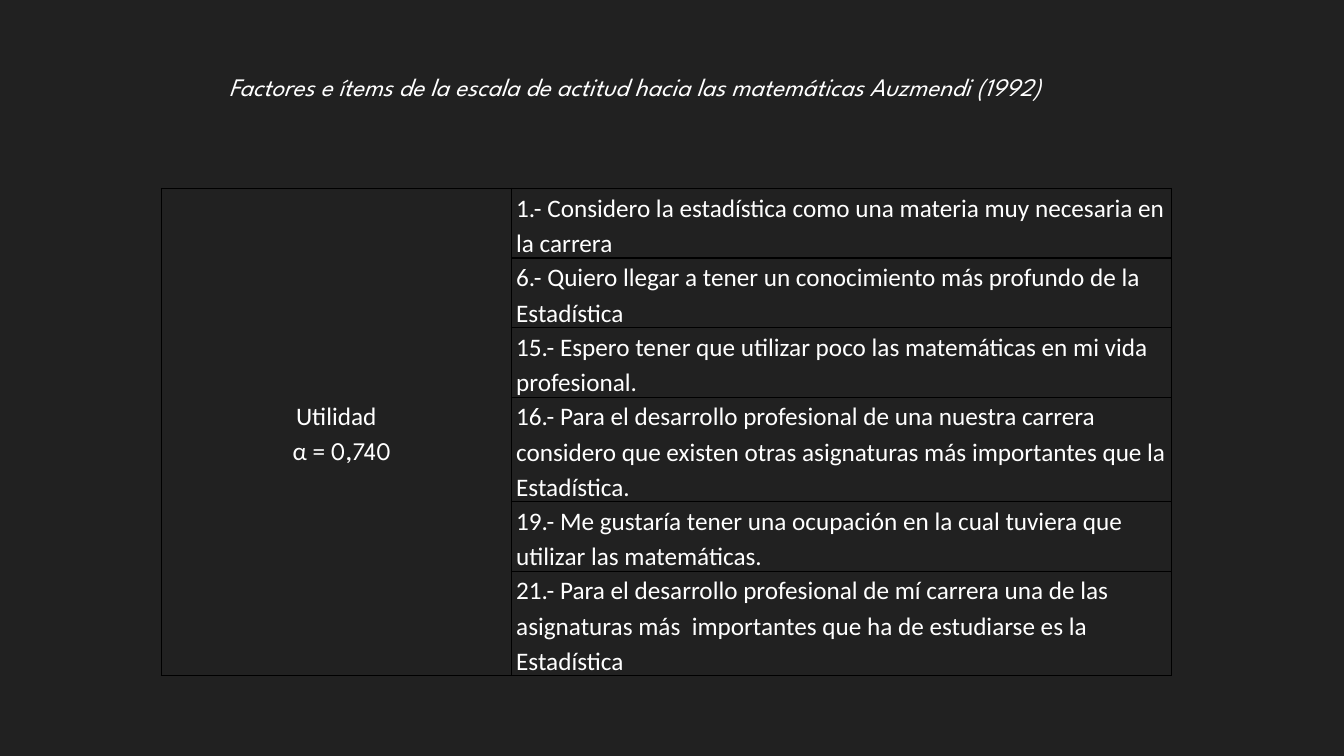
from lxml import etree
from pptx import Presentation
from pptx.dml.color import RGBColor
from pptx.enum.text import MSO_ANCHOR, MSO_AUTO_SIZE, PP_ALIGN
from pptx.oxml.ns import qn
from pptx.util import Inches, Pt

CENTER, LEFT = PP_ALIGN.CENTER, PP_ALIGN.LEFT
TOP, MIDDLE = MSO_ANCHOR.TOP, MSO_ANCHOR.MIDDLE
FIT_SHAPE = MSO_AUTO_SIZE.SHAPE_TO_FIT_TEXT
DARK = RGBColor(0x21, 0x21, 0x21)
WHITE = RGBColor(0xFF, 0xFF, 0xFF)
BLACK = RGBColor(0, 0, 0)
BODY_FONT, TITLE_FONT = "Calibri", "League Spartan"
LINE_HEIGHT = 0.345

# Each item with the number of lines it takes
ITEMS = [
    ("1.- Considero la estadística como una materia muy necesaria en la carrera", 2),
    ("6.- Quiero llegar a tener un conocimiento más profundo de la Estadística", 2),
    ("15.- Espero tener que utilizar poco las matemáticas en mi vida profesional.", 2),
    ("16.- Para el desarrollo profesional de una nuestra carrera considero que "
     "existen otras asignaturas más importantes que la Estadística.", 3),
    ("19.- Me gustaría tener una ocupación en la cual tuviera que utilizar las "
     "matemáticas.", 2),
    ("21.- Para el desarrollo profesional de mí carrera una de las asignaturas "
     "más  importantes que ha de estudiarse es la Estadística", 3),
]


def style(p, font, align):
    p.alignment = align
    p.font.name = font
    p.font.size = Pt(18)
    p.font.color.rgb = WHITE


def format_cell(cell):
    cell.margin_left = cell.margin_right = Inches(0.05)
    cell.margin_top = cell.margin_bottom = 0
    tcPr = cell._tc.get_or_add_tcPr()
    for side in ("lnL", "lnR", "lnT", "lnB"):
        ln = etree.SubElement(tcPr, qn(f"a:{side}"), w=str(Pt(1)))
        fill = etree.SubElement(ln, qn("a:solidFill"))
        etree.SubElement(fill, qn("a:srgbClr"), val=str(BLACK))
    cell.fill.background()


prs = Presentation()
prs.slide_width, prs.slide_height = Inches(13.33), Inches(7.5)
s = prs.slides.add_slide(prs.slide_layouts[5])
s.background.fill.solid()
s.background.fill.fore_color.rgb = DARK

# Title
title = s.shapes.title
title.left, title.top = Inches(2.11), Inches(0.66)
title.width, title.height = Inches(8.35), Inches(0.4)
tf = title.text_frame
tf.text = "Factores e ítems de la escala de actitud hacia las matemáticas Auzmendi (1992)"
tf.word_wrap = True
tf.auto_size = FIT_SHAPE
tf.vertical_anchor = TOP
tf.margin_left = Inches(0.16)
p = tf.paragraphs[0]
style(p, TITLE_FONT, LEFT)
p.font.italic = True

# Table of factor and items
total = LINE_HEIGHT * sum(lines for _, lines in ITEMS)
table = s.shapes.add_table(len(ITEMS), 2, Inches(1.6), Inches(1.87),
                           Inches(10.02), Inches(total)).table
table.first_row = table.horz_banding = False
table.columns[0].width, table.columns[1].width = Inches(3.47), Inches(6.55)
for cell in table.iter_cells():
    format_cell(cell)

for i, (item, lines) in enumerate(ITEMS):
    table.rows[i].height = Inches(LINE_HEIGHT * lines)
    tf = table.cell(i, 1).text_frame
    tf.text = item
    p = tf.paragraphs[0]
    style(p, BODY_FONT, LEFT)
    p.line_spacing = 1.15

# Factor name and its reliability, beside all the items
factor = table.cell(0, 0)
factor.merge(table.cell(len(ITEMS) - 1, 0))
factor.vertical_anchor = MIDDLE
tf = factor.text_frame
tf.text = "Utilidad\nα = "
for p in tf.paragraphs:
    style(p, BODY_FONT, CENTER)
    p.line_spacing = 1.15
r = p.add_run()
r.text = "0,740"
r.font.name = TITLE_FONT
p._p.get_or_add_pPr().set("marL", str(Inches(0.11)))

prs.save("out.pptx")
